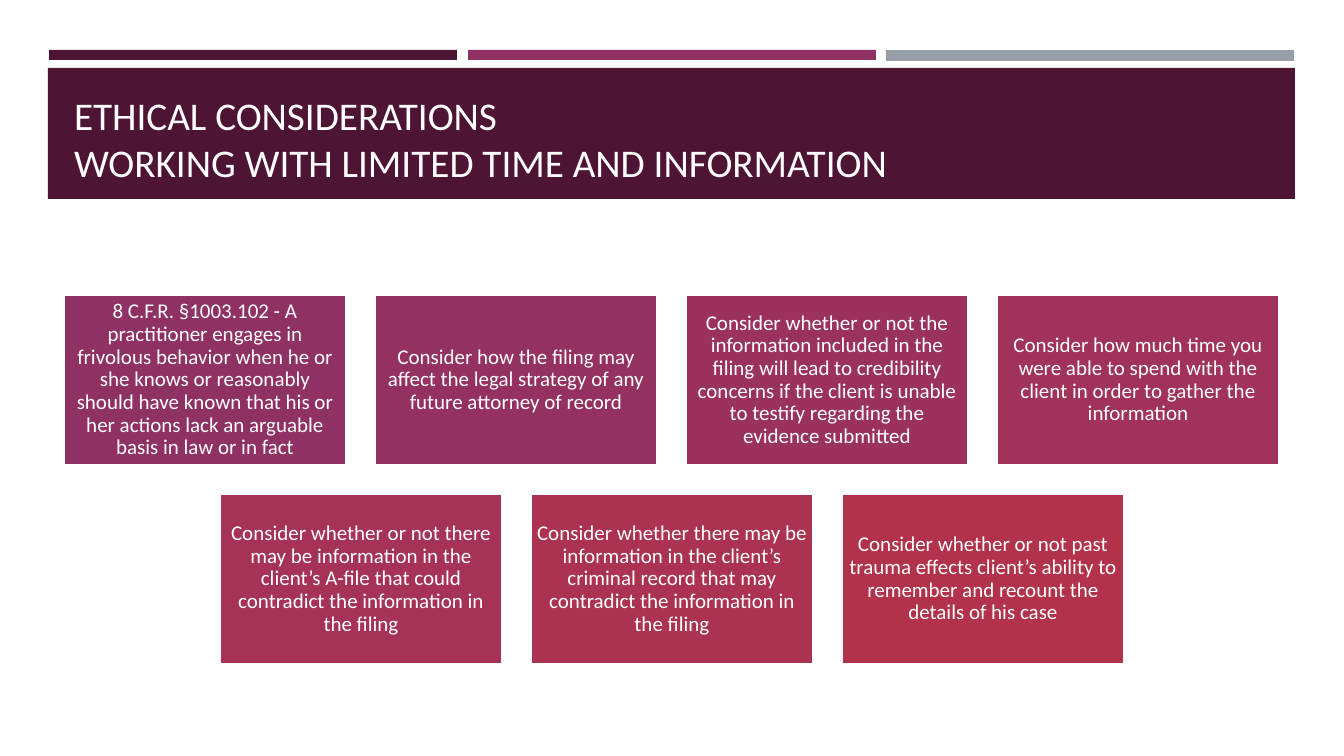
import pptx
import pptx.dml.color
import pptx.enum.shapes
import pptx.enum.text
import pptx.util

ALIGN = pptx.enum.text.PP_ALIGN
ANCHOR = pptx.enum.text.MSO_ANCHOR
SLIDE_W, SLIDE_H = 1344, 756
CARD_W, CARD_H, GAP, CARDS_TOP = 282, 170, 29, 295
BARS = [(49, 10, "4D1434"), (468, 10, "903163"), (886, 11, "969FA7")]
CARD_ROWS = [
    [
        ("903163", "8 C.F.R. §1003.102 - A practitioner engages in frivolous behavior when he or she "
                   "knows or reasonably should have known that his or her actions lack an arguable "
                   "basis in law or in fact"),
        ("953161", "Consider how the filing may affect the legal strategy of any future attorney of record"),
        ("9B325D", "Consider whether or not the information included in the filing will lead to "
                   "credibility concerns if the client is unable to testify regarding the evidence submitted"),
        ("A1325A", "Consider how much time you were able to spend with the client in order to gather "
                   "the information"),
    ],
    [
        ("A63256", "Consider whether or not there may be information in the client’s A-file that could "
                   "contradict the information in the filing"),
        ("AC3251", "Consider whether there may be information in the client’s criminal record that may "
                   "contradict the information in the filing"),
        ("B2324B", "Consider whether or not past trauma effects client’s ability to remember and "
                   "recount the details of his case"),
    ],
]


def px(n):
    return pptx.util.Emu(round(n * 12192000 / SLIDE_W))


def color(value):
    return pptx.dml.color.RGBColor.from_string(value)


def write(sp, text, font="Calibri", size=15, fill="FFFFFF", align=ALIGN.CENTER,
          anchor=ANCHOR.MIDDLE, spacing=0.9, inset_x=6, inset_y=6):
    tf = sp.text_frame
    tf.word_wrap = True
    tf.auto_size = pptx.enum.text.MSO_AUTO_SIZE.NONE
    tf.vertical_anchor = anchor
    tf.margin_left = tf.margin_right = px(inset_x)
    tf.margin_top = tf.margin_bottom = px(inset_y)
    p = tf.paragraphs[0]
    p.alignment = align
    p.line_spacing = spacing
    for i, line in enumerate(text.split("\n")):
        if i:
            p.add_line_break()
        r = p.add_run()
        r.text = line
        r.font.name = font
        r.font.size = pptx.util.Pt(size)
        r.font.color.rgb = color(fill)


class Deck:
    """Holds the presentation, its style and the current slide."""

    def __init__(self):
        self.prs = pptx.Presentation()
        self.prs.slide_width, self.prs.slide_height = px(SLIDE_W), px(SLIDE_H)
        self.s = self.prs.slides.add_slide(self.prs.slide_layouts[5])

    def rect(self, x, y, w, h, fill, line=None):
        kind = pptx.enum.shapes.MSO_SHAPE.RECTANGLE
        sp = self.s.shapes.add_shape(kind, px(x), px(y), px(w), px(h))
        sp.shadow.inherit = False
        sp.fill.solid()
        sp.fill.fore_color.rgb = color(fill)
        if line:
            sp.line.color.rgb = color(line)
            sp.line.width = pptx.util.Pt(1.75)
        else:
            sp.line.fill.background()
        return sp

    def title(self, x, y, w, h, text):
        sp = self.s.shapes.title
        sp.left, sp.top, sp.width, sp.height = px(x), px(y), px(w), px(h)
        write(sp, text, size=28, fill="FFFEFF", align=ALIGN.LEFT, anchor=ANCHOR.BOTTOM,
              spacing=1.0, inset_x=10, inset_y=5)
        sp._element.getparent().append(sp._element)

    def card(self, x, y, fill, text):
        write(self.rect(x, y, CARD_W, CARD_H, fill, line="FFFFFF"), text)


def main():
    deck = Deck()
    for x, h, fill in BARS:
        deck.rect(x, 50, 408, h, fill)
    deck.rect(48, 68, 1247, 131, "4D1434")
    deck.title(64, 78, 1216, 112,
               "ETHICAL CONSIDERATIONS\nWORKING WITH LIMITED TIME AND INFORMATION")
    for row, cards in enumerate(CARD_ROWS):
        left = (SLIDE_W - len(cards) * (CARD_W + GAP) + GAP) // 2
        for col, (fill, text) in enumerate(cards):
            deck.card(left + col * (CARD_W + GAP), CARDS_TOP + row * (CARD_H + GAP), fill, text)
    deck.prs.save("out.pptx")


if __name__ == "__main__":
    main()
